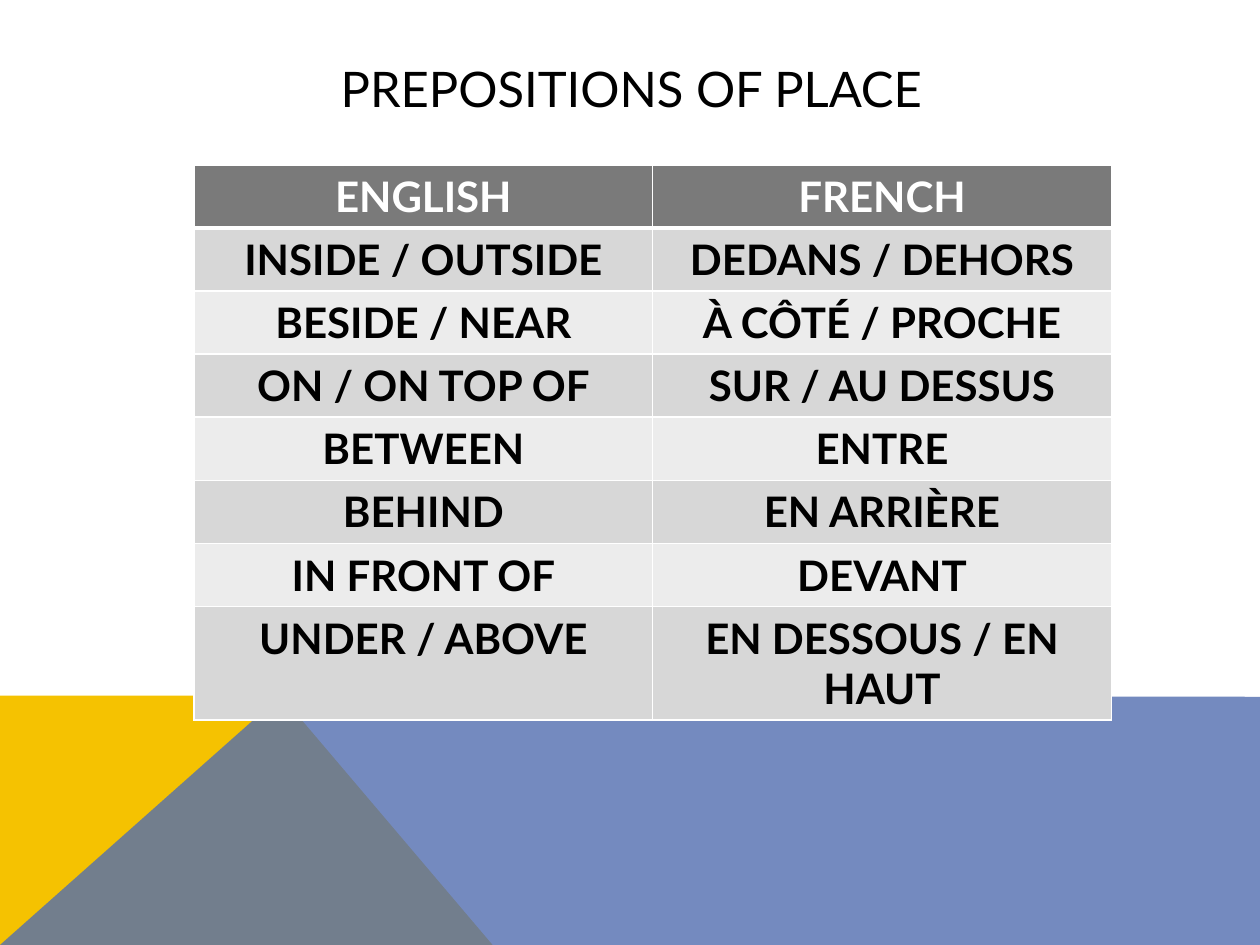
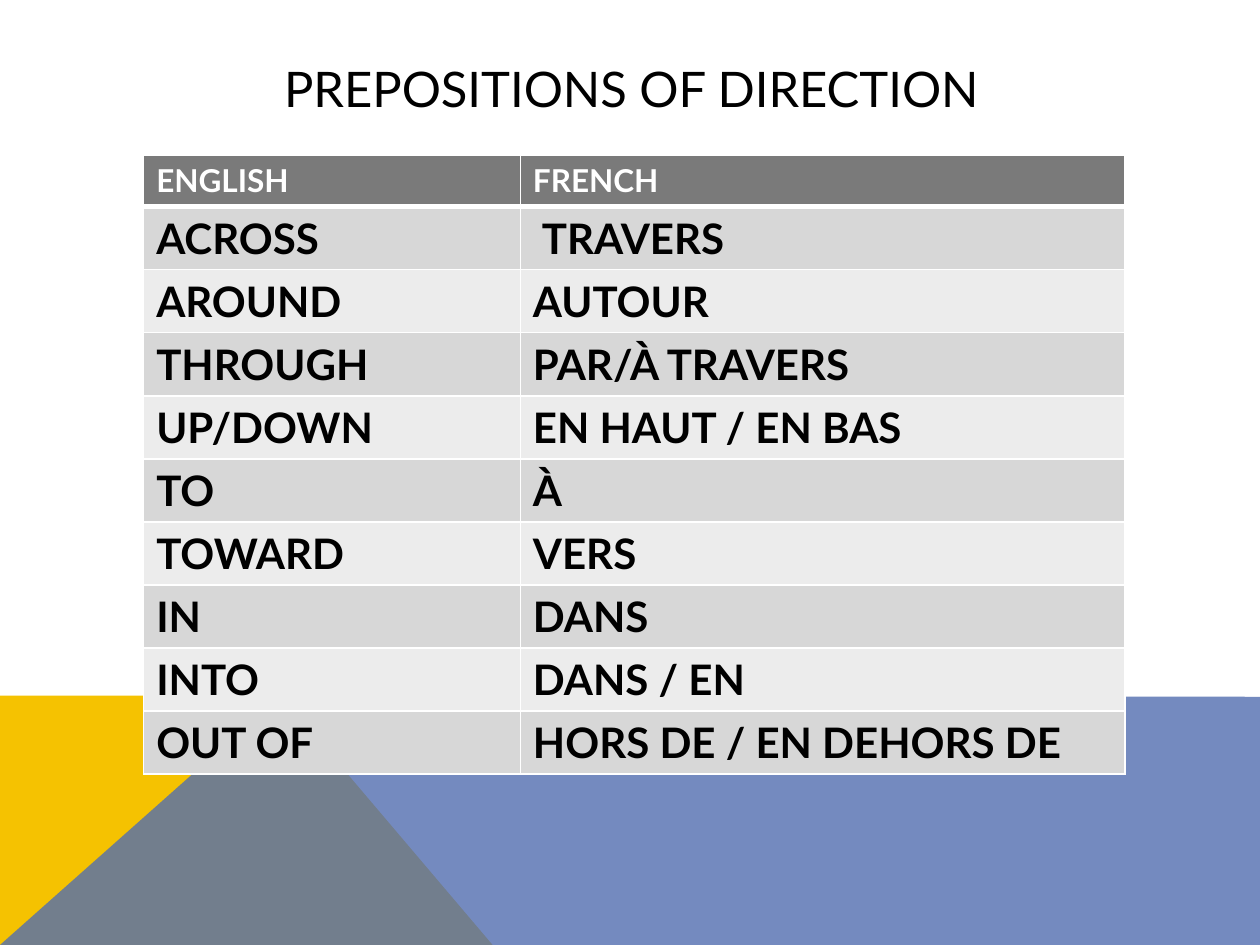
import pptx
import pptx.dml.color
import pptx.enum.text
import pptx.oxml.ns
import pptx.util
from lxml import etree

Inches = pptx.util.Inches
ALIGN = pptx.enum.text.PP_ALIGN
FONT = "Lato"
COLORS = {
    "text": "000000",
    "white": "FFFFFF",
    "header": "7A7A7A",
    "odd_row": "D7D7D7",
    "even_row": "ECECEC",
    "yellow": "F5C201",
    "blue": "526DB0",
}
ROW_HEIGHT = 0.41

PLACE_ROWS = [
    ("ENGLISH", "FRENCH"),
    ("INSIDE / OUTSIDE", "DEDANS / DEHORS"),
    ("BESIDE / NEAR", "À CÔTÉ / PROCHE"),
    ("ON / ON TOP OF", "SUR / AU DESSUS"),
    ("BETWEEN", "ENTRE"),
    ("BEHIND", "EN ARRIÈRE"),
    ("IN FRONT OF", "DEVANT"),
    ("UNDER / ABOVE", "EN DESSOUS / EN HAUT"),
]
DIRECTION_ROWS = [
    ("ENGLISH", "FRENCH"),
    ("ACROSS", " TRAVERS"),
    ("AROUND", "AUTOUR"),
    ("THROUGH", "PAR/À TRAVERS"),
    ("UP/DOWN", "EN HAUT / EN BAS"),
    ("TO", "À"),
    ("TOWARD", "VERS"),
    ("IN", "DANS"),
    ("INTO", "DANS / EN"),
    ("OUT OF", "HORS DE / EN DEHORS DE"),
]


def rgb(name):
    return pptx.dml.color.RGBColor.from_string(COLORS[name])


def write_text(frame, text, size=24, color="text", bold=False, align=ALIGN.LEFT):
    frame.word_wrap = True
    para = frame.paragraphs[0]
    para.alignment = align
    span = para.add_run()
    span.text = text
    span.font.name = FONT
    span.font.size = pptx.util.Pt(size)
    span.font.bold = bold
    span.font.color.rgb = rgb(color)


def add_polygon(page, points, color, opacity=100):
    corners = [(Inches(x), Inches(y)) for x, y in points]
    builder = page.shapes.build_freeform(*corners[0])
    builder.add_line_segments(corners[1:], close=True)
    shape = builder.convert_to_shape()
    shape.shadow.inherit = False
    shape.line.fill.background()
    shape.fill.solid()
    shape.fill.fore_color.rgb = rgb(color)
    if opacity < 100:
        tint = shape.fill._xPr.find(".//" + pptx.oxml.ns.qn("a:srgbClr"))
        etree.SubElement(tint, pptx.oxml.ns.qn("a:alpha"), val=str(opacity * 1000))


def add_title(page, text):
    box = page.shapes.add_textbox(Inches(0.9), Inches(0.4), Inches(8.22), Inches(0.6))
    box.text_frame.vertical_anchor = pptx.enum.text.MSO_ANCHOR.MIDDLE
    write_text(box.text_frame, text, size=28, align=ALIGN.CENTER)


def set_borders(cell, bottom=1):
    properties = cell._tc.get_or_add_tcPr()
    widths = {"lnL": 1, "lnR": 1, "lnT": 1, "lnB": bottom}
    for position, (side, width) in enumerate(widths.items()):
        line = etree.Element(pptx.oxml.ns.qn("a:" + side), w=str(pptx.util.Pt(width)))
        fill = etree.SubElement(line, pptx.oxml.ns.qn("a:solidFill"))
        etree.SubElement(fill, pptx.oxml.ns.qn("a:srgbClr"), val=COLORS["white"])
        properties.insert(position, line)


def add_word_table(page, rows, left, top, widths, header_size=24, align=ALIGN.LEFT):
    frame = page.shapes.add_table(
        len(rows), len(widths), Inches(left), Inches(top),
        Inches(sum(widths)), Inches(ROW_HEIGHT * len(rows)))
    table = frame.table
    for column, width in zip(table.columns, widths):
        column.width = Inches(width)
    for index, words in enumerate(rows):
        table.rows[index].height = Inches(ROW_HEIGHT)
        is_header = index == 0
        band = "header" if is_header else "odd_row" if index % 2 else "even_row"
        for column, word in enumerate(words):
            cell = table.cell(index, column)
            cell.fill.solid()
            cell.fill.fore_color.rgb = rgb(band)
            set_borders(cell, bottom=3 if is_header else 1)
            write_text(cell.text_frame, word, bold=True, align=align,
                       size=header_size if is_header else 24,
                       color="white" if is_header else "text")


def add_page(deck, title):
    page = deck.slides.add_slide(deck.slide_layouts[6])
    page.background.fill.solid()
    page.background.fill.fore_color.rgb = rgb("white")
    # Overlapping bands along the bottom
    add_polygon(page, [(0, 7.5), (0, 5.52), (2.23, 5.52), (3.91, 7.5)], "yellow")
    add_polygon(page, [(0, 7.5), (2.23, 5.52), (10, 5.53), (10, 7.5)], "blue", opacity=80)
    add_title(page, title)
    return page


def main():
    deck = pptx.Presentation()
    deck.slide_width, deck.slide_height = Inches(10), Inches(7.5)

    # Prepositions of place
    page = add_page(deck, "PREPOSITIONS OF PLACE")
    add_word_table(page, PLACE_ROWS, 1.54, 1.31, (3.64, 3.64), align=ALIGN.CENTER)

    # Prepositions of direction
    page = add_page(deck, "PREPOSITIONS OF DIRECTION")
    add_word_table(page, DIRECTION_ROWS, 1.14, 1.23, (2.99, 4.8), header_size=18)

    deck.save("out.pptx")


if __name__ == "__main__":
    main()
